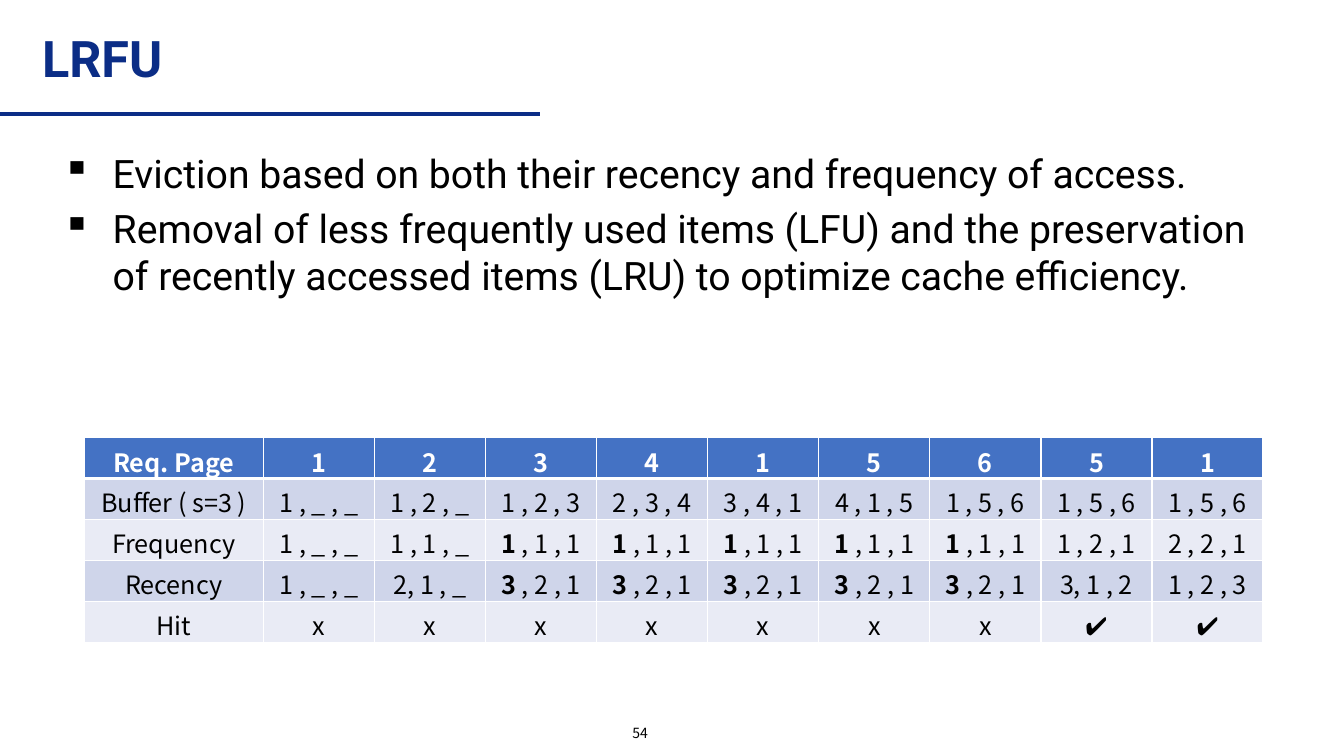
from lxml import etree
from pptx import Presentation
from pptx import util as u
from pptx.dml.color import RGBColor
from pptx.enum import shapes, text
from pptx.oxml import ns

NAVY, BLACK, WHITE = "0B2D86", "000000", "FFFFFF"
HEADER_FILL, BANDS = "4472C4", ("CFD5EA", "E9EBF5")
TITLE_FONT, TABLE_FONT = "Roboto", "Noto Sans CJK KR"


def rgb(value):
    return RGBColor.from_string(value)


def add_run(paragraph, words, color, **font_values):
    run = paragraph.add_run()
    run.text = words
    run.font.color.rgb = rgb(color)
    for name, value in font_values.items():
        setattr(run.font, name, value)


presentation = Presentation()
presentation.slide_width, presentation.slide_height = u.Cm(33.87), u.Cm(19.05)
slide = presentation.slides.add_slide(presentation.slide_layouts[6])

# Rule under the title
rule = slide.shapes.add_connector(
    shapes.MSO_CONNECTOR.STRAIGHT, u.Cm(0), u.Cm(2.87), u.Cm(13.61), u.Cm(2.87))
rule.line.color.rgb = rgb(NAVY)
rule.line.width = u.Pt(3)
etree.SubElement(rule._element.spPr, ns.qn("a:effectLst"))

# Title, slide number and bullets
bullets = [
    "Eviction based on both their recency and frequency of access.",
    "Removal of less frequently used items (LFU) and the preservation of recently "
    "accessed items (LRU) to optimize cache efficiency.",
]
title_style = {"size": u.Pt(36), "name": TITLE_FONT, "bold": True}
number_style = {"size": u.Pt(10), "name": TABLE_FONT}
bullet_style = {"size": u.Pt(28), "name": TITLE_FONT}
LEFT, CENTER = text.PP_ALIGN.LEFT, text.PP_ALIGN.CENTER
MIDDLE, TOP = text.MSO_ANCHOR.MIDDLE, text.MSO_ANCHOR.TOP
text_boxes = [
    ((0.81, 0.61, 23.29, 1.88), ["LRFU"], NAVY, LEFT, MIDDLE, 0.9, title_style),
    ((12.32, 18.06, 7.62, 0.81), ["54"], BLACK, CENTER, MIDDLE, 1, number_style),
    ((1.32, 3.63, 30.84, 7), bullets, BLACK, LEFT, TOP, 1, bullet_style),
]
for place, lines, color, alignment, anchor, spacing, style in text_boxes:
    frame = slide.shapes.add_textbox(*map(u.Cm, place)).text_frame
    frame.word_wrap = True
    frame.vertical_anchor = anchor
    for index, line in enumerate(lines):
        paragraph = frame.add_paragraph() if index else frame.paragraphs[0]
        paragraph.alignment = alignment
        paragraph.line_spacing = spacing
        paragraph.space_before = u.Pt(6 if index else 0)
        if lines is bullets:
            properties = paragraph._p.get_or_add_pPr()
            properties.set("marL", str(u.Cm(1.27)))
            properties.set("indent", str(-u.Cm(1.27)))
            etree.SubElement(properties, ns.qn("a:buChar"), char="▪")
        add_run(paragraph, line, color, **style)

# Page request table; "*" marks a bold first number
rows = [
    ["Req. Page", "1", "2", "3", "4", "1", "5", "6", "5", "1"],
    ["Buffer ( s=3 )", "1 , _ , _", "1 , 2 , _", "1 , 2 , 3", "2 , 3 , 4",
     "3 , 4 , 1", "4 , 1 , 5"] + ["1 , 5 , 6"] * 3,
    ["Frequency", "1 , _ , _", "1 , 1 , _"] + ["1* , 1 , 1"] * 5 + ["1 , 2 , 1", "2 , 2 , 1"],
    ["Recency", "1 , _ , _", "2, 1 , _"] + ["3* , 2 , 1"] * 5 + ["3, 1 , 2", "1 , 2 , 3"],
    ["Hit"] + ["x"] * 7 + ["✔"] * 2,
]
table_frame = slide.shapes.add_table(
    len(rows), len(rows[0]), u.Cm(2.12), u.Cm(11.03), u.Cm(29.72), u.Cm(5.15))
table = table_frame.table
for index, column in enumerate(table.columns):
    column.width = u.Cm(2.8 if index else 4.52)
for row in table.rows:
    row.height = u.Cm(1.03)

for row_index, row in enumerate(rows):
    is_header = row_index == 0
    for column_index, words in enumerate(row):
        cell = table.cell(row_index, column_index)
        properties = cell._tc.get_or_add_tcPr()
        thick_side = {0: "lnB", 1: "lnT"}.get(row_index)
        for side in ("lnL", "lnR", "lnT", "lnB"):
            width = u.Pt(3 if side == thick_side else 1)
            border = etree.SubElement(properties, ns.qn(f"a:{side}"), w=str(width))
            fill = etree.SubElement(border, ns.qn("a:solidFill"))
            etree.SubElement(fill, ns.qn("a:srgbClr"), val=WHITE)
        cell.fill.solid()
        cell.fill.fore_color.rgb = rgb(HEADER_FILL if is_header else BANDS[(row_index - 1) % 2])
        paragraph = cell.text_frame.paragraphs[0]
        paragraph.alignment = CENTER
        bold_part, _, plain_part = words.rpartition("*")
        for part, bold in ((bold_part, True), (plain_part, is_header)):
            if part:
                add_run(paragraph, part, WHITE if is_header else BLACK,
                        size=u.Pt(18), name=TABLE_FONT, bold=bold)

presentation.save("out.pptx")
